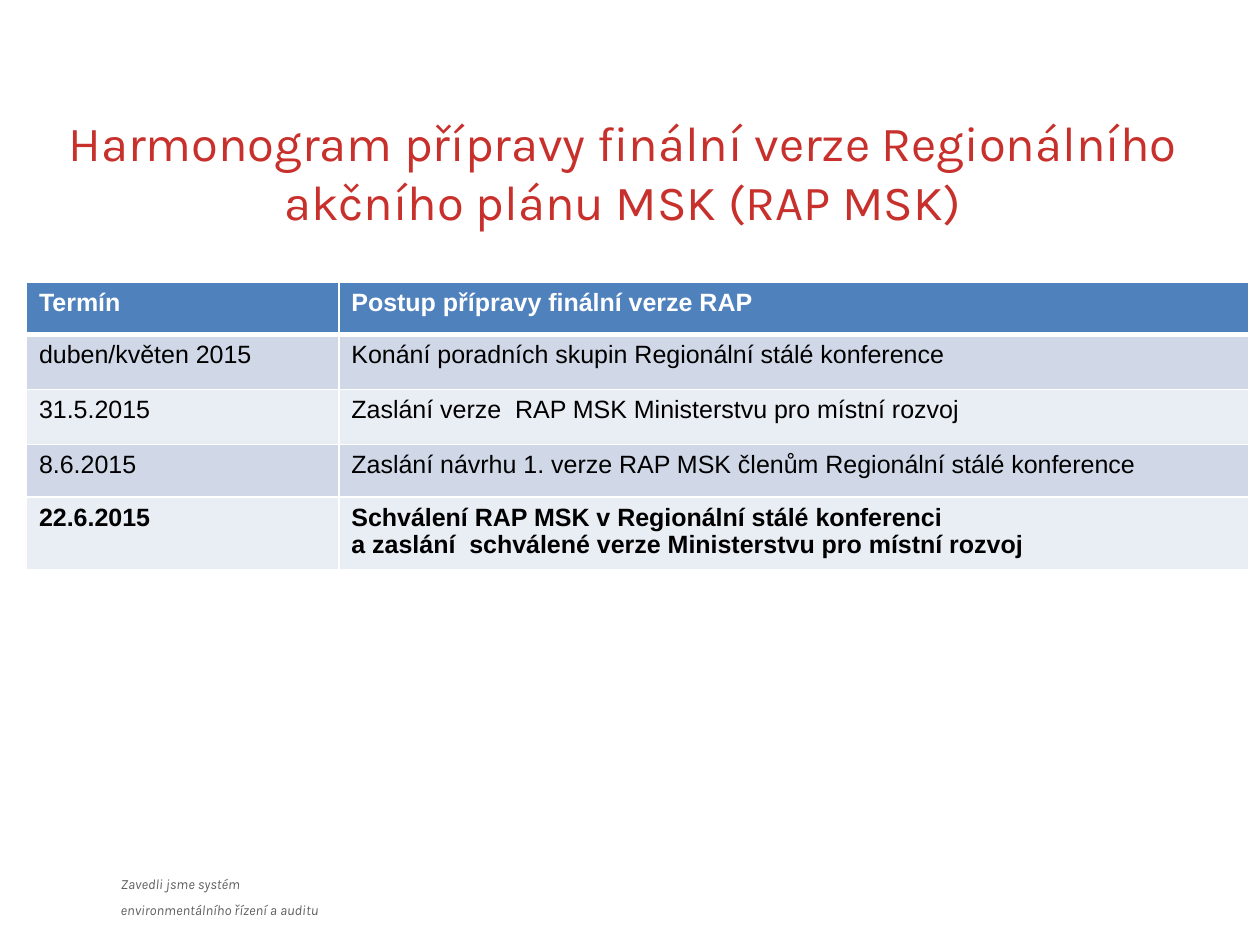
from lxml import etree
from pptx import Presentation
from pptx import util as u
from pptx.dml.color import RGBColor
from pptx.enum import text
from pptx.oxml.ns import qn

Pt = u.Pt
RED = RGBColor(0xC8, 0x30, 0x2C)
GREY = RGBColor(0x5F, 0x5F, 0x5F)
WHITE = RGBColor(0xFF, 0xFF, 0xFF)
BLACK = RGBColor(0, 0, 0)
BLUE = RGBColor(0x4F, 0x81, 0xBD)
BANDS = (RGBColor(0xD0, 0xD8, 0xE8), RGBColor(0xE9, 0xED, 0xF4))

ROWS = [
    ("Termín", "Postup přípravy finální verze RAP"),
    ("duben/květen 2015", "Konání poradních skupin Regionální stálé konference"),
    ("31.5.2015", "Zaslání verze  RAP MSK Ministerstvu pro místní rozvoj"),
    ("8.6.2015", "Zaslání návrhu 1. verze RAP MSK členům Regionální stálé konference"),
    ("22.6.2015", "Schválení RAP MSK v Regionální stálé konferenci\n"
                  "a zaslání  schválené verze Ministerstvu pro místní rozvoj"),
]
COL_WIDTHS = (178.5, 519.9)
ROW_HEIGHTS = (30, 31.4, 31.4, 30, 39.2)


def fill_text(tf, content, color, para=None, gap=0, **font):
    """Write one paragraph per line, with a gap before all but the first."""
    for i, line in enumerate(content.split("\n")):
        p = tf.add_paragraph() if i else tf.paragraphs[0]
        for name, value in (para or {}).items():
            setattr(p, name, value)
        p.space_before = Pt(gap if i else 0)
        r = p.add_run()
        r.text = line
        for name, value in font.items():
            setattr(r.font, name, value)
        r.font.color.rgb = color


def add_text(s, box, content, color, anchor, **fmt):
    sp = s.shapes.add_textbox(*map(Pt, box))
    tf = sp.text_frame
    tf.word_wrap = True
    tf.vertical_anchor = anchor
    fill_text(tf, content, color, **fmt)


def set_borders(cell, widths):
    tc_pr = cell._tc.get_or_add_tcPr()
    for i, (side, width) in enumerate(widths.items()):
        ln = etree.Element(qn(f"a:ln{side}"), w=str(int(Pt(width))))
        fill = etree.SubElement(ln, qn("a:solidFill"))
        etree.SubElement(fill, qn("a:srgbClr"), val=str(WHITE))
        tc_pr.insert(i, ln)  # borders come before the fill


def add_schedule(s, left, top):
    frame = s.shapes.add_table(len(ROWS), len(COL_WIDTHS), Pt(left), Pt(top),
                               Pt(sum(COL_WIDTHS)), Pt(sum(ROW_HEIGHTS)))
    table = frame.table
    for col, width in zip(table.columns, COL_WIDTHS):
        col.width = Pt(width)
    for row, height in zip(table.rows, ROW_HEIGHTS):
        row.height = Pt(height)
    for i, values in enumerate(ROWS):
        header, last = i == 0, i == len(ROWS) - 1
        for j, value in enumerate(values):
            cell = table.cell(i, j)
            cell.fill.solid()
            cell.fill.fore_color.rgb = BLUE if header else BANDS[(i - 1) % 2]
            set_borders(cell, {"L": 1, "R": 1, "T": 3 if i == 1 else 1,
                               "B": 3 if header else 1})
            fill_text(cell.text_frame, value, WHITE if header else BLACK,
                      para={"alignment": text.PP_ALIGN.LEFT},
                      name="Arial", size=Pt(14.3), bold=header or last)


def main():
    prs = Presentation()
    prs.slide_width, prs.slide_height = Pt(720), Pt(540)
    s = prs.slides.add_slide(prs.slide_layouts[6])

    # Footer motto
    add_text(s, (61.9, 495.4, 136, 29.5),
             "Zavedli jsme systém\nenvironmentálního řízení a auditu",
             GREY, text.MSO_ANCHOR.TOP, gap=4,
             para={"alignment": text.PP_ALIGN.JUSTIFY, "line_spacing": 1.15},
             name="Karla", size=Pt(8), italic=True)

    # Title
    add_text(s, (18.7, 69.8, 673.9, 56.2),
             "Harmonogram přípravy finální verze Regionálního akčního plánu MSK (RAP MSK)",
             RED, text.MSO_ANCHOR.MIDDLE,
             para={"alignment": text.PP_ALIGN.CENTER},
             name="Karla", size=Pt(28))

    # Schedule table
    add_schedule(s, 15.1, 161.3)

    prs.save("out.pptx")


if __name__ == "__main__":
    main()
